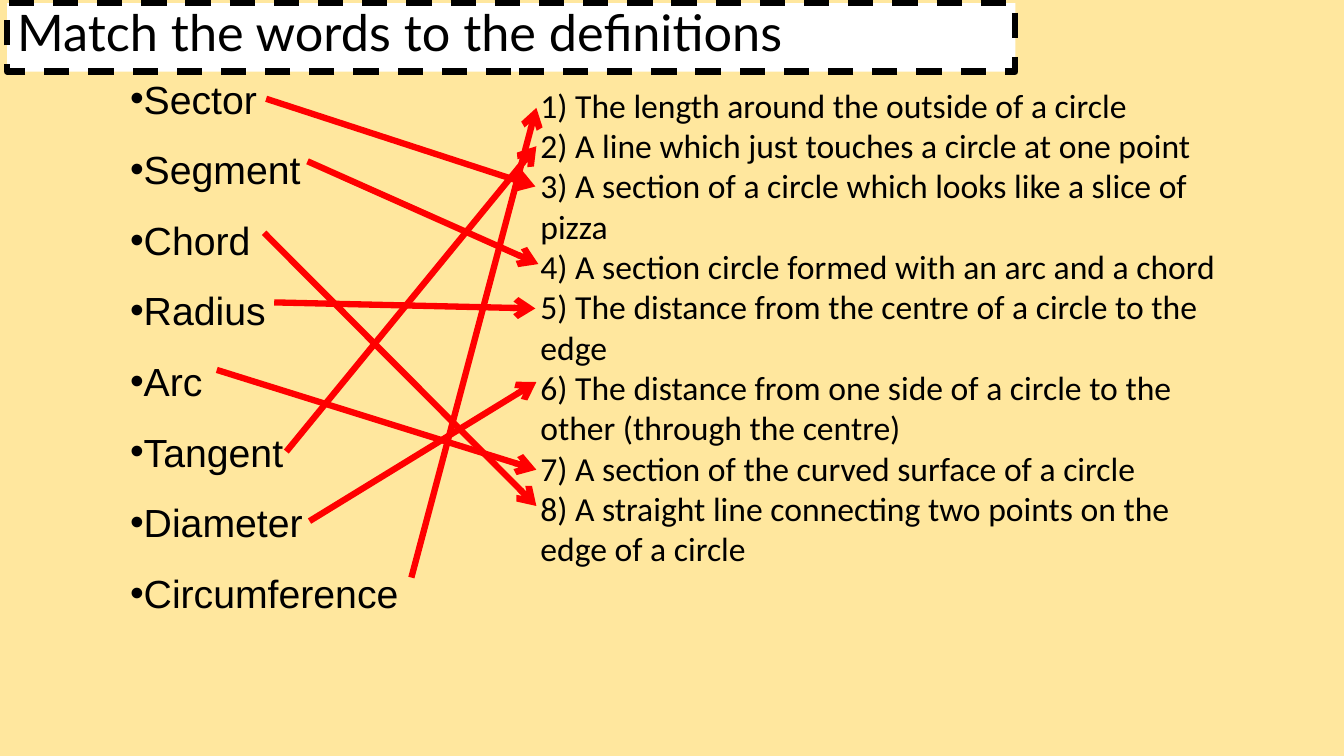
from lxml import etree
from pptx import Presentation
from pptx.dml.color import RGBColor
from pptx.enum.dml import MSO_LINE
from pptx.enum.shapes import MSO_CONNECTOR
from pptx.enum.text import MSO_ANCHOR, MSO_AUTO_SIZE, PP_ALIGN
from pptx.oxml.ns import qn
from pptx.util import Inches, Pt

DASH = MSO_LINE.DASH
LINE = MSO_CONNECTOR.STRAIGHT
TOP = MSO_ANCHOR.TOP
FIXED = MSO_AUTO_SIZE.NONE
LEFT = PP_ALIGN.LEFT

COLORS = {"page": "FFE79E", "text": "000000", "box": "FFFFFF", "arrow": "FF0000"}

WORDS = ["Sector", "Segment", "Chord", "Radius", "Arc", "Tangent",
         "Diameter", "Circumference"]
MEANINGS = [
    "The length around the outside of a circle",
    "A line which just touches a circle at one point",
    "A section of a circle which looks like a slice of pizza",
    "A section circle formed with an arc and a chord",
    "The distance from the centre of a circle to the edge",
    "The distance from one side of a circle to the other (through the centre)",
    "A section of the curved surface of a circle",
    "A straight line connecting two points on the edge of a circle",
]
MATCHES = [
    ((2.64, 0.98), (5.31, 1.85)),
    ((4.08, 5.73), (5.32, 1.07)),
    ((2.62, 2.31), (5.32, 5.02)),
    ((2.15, 3.67), (5.32, 4.66)),
    ((2.72, 3), (5.31, 3.06)),
    ((3.07, 5.17), (5.32, 3.79)),
    ((2.84, 4.48), (5.32, 1.45)),
    ((3.05, 1.6), (5.34, 2.62)),
]


def color(name):
    return RGBColor.from_string(COLORS[name])


def place(shape, left, top, width, height):
    shape.left, shape.top = Inches(left), Inches(top)
    shape.width, shape.height = Inches(width), Inches(height)


def write(shape, lines, font, size, gap, bullet=None):
    frame = shape.text_frame
    frame.word_wrap = True
    frame.auto_size = FIXED
    frame.vertical_anchor = TOP
    for i, line in enumerate(lines):
        para = frame.add_paragraph() if i else frame.paragraphs[0]
        para.alignment = LEFT
        para.line_spacing = gap
        para.space_before = Pt(0)
        props = para._p.get_or_add_pPr()
        props.set("marL", "0")
        props.set("indent", "0")
        if bullet:
            face = etree.SubElement(props, qn("a:buFont"))
            face.set("typeface", font)
            etree.SubElement(props, qn("a:buChar")).set("char", bullet)
        else:
            etree.SubElement(props, qn("a:buNone"))
        run = para.add_run()
        run.text = line
        run.font.name = font
        run.font.size = Pt(size)
        run.font.color.rgb = color("text")


def frame_box(shape):
    shape.fill.solid()
    shape.fill.fore_color.rgb = color("box")
    shape.line.color.rgb = color("text")
    shape.line.width = Pt(4.5)
    shape.line.dash_style = DASH


def arrow(slide, start, end):
    ends = [Inches(n) for n in start + end]
    link = slide.shapes.add_connector(LINE, *ends)
    link.line.color.rgb = color("arrow")
    link.line.width = Pt(4.5)
    props = link._element.spPr
    tail = etree.SubElement(props.find(qn("a:ln")), qn("a:tailEnd"))
    tail.set("type", "arrow")
    etree.SubElement(props, qn("a:effectLst"))


def main():
    deck = Presentation()
    deck.slide_width, deck.slide_height = Inches(13.33), Inches(7.5)
    slide = deck.slides.add_slide(deck.slide_layouts[3])
    slide.background.fill.solid()
    slide.background.fill.fore_color.rgb = color("page")

    title, words, meanings = list(slide.placeholders)[:3]
    place(title, 0.07, 0.03, 10, 0.68)
    frame_box(title)
    write(title, ["Match the words to the definitions"], "Lato", 36, 0.9)

    place(words, 1.19, 0.46, 4.65, 6.66)
    write(words, WORDS, "Arial", 28, 1.5, "•")

    place(meanings, 5.26, 0.79, 7.04, 5.49)
    lines = [f"{n}) {text}" for n, text in enumerate(MEANINGS, 1)]
    write(meanings, lines, "Calibri", 24, 1.0)

    for start, end in MATCHES:
        arrow(slide, start, end)

    deck.save("out.pptx")


if __name__ == "__main__":
    main()
